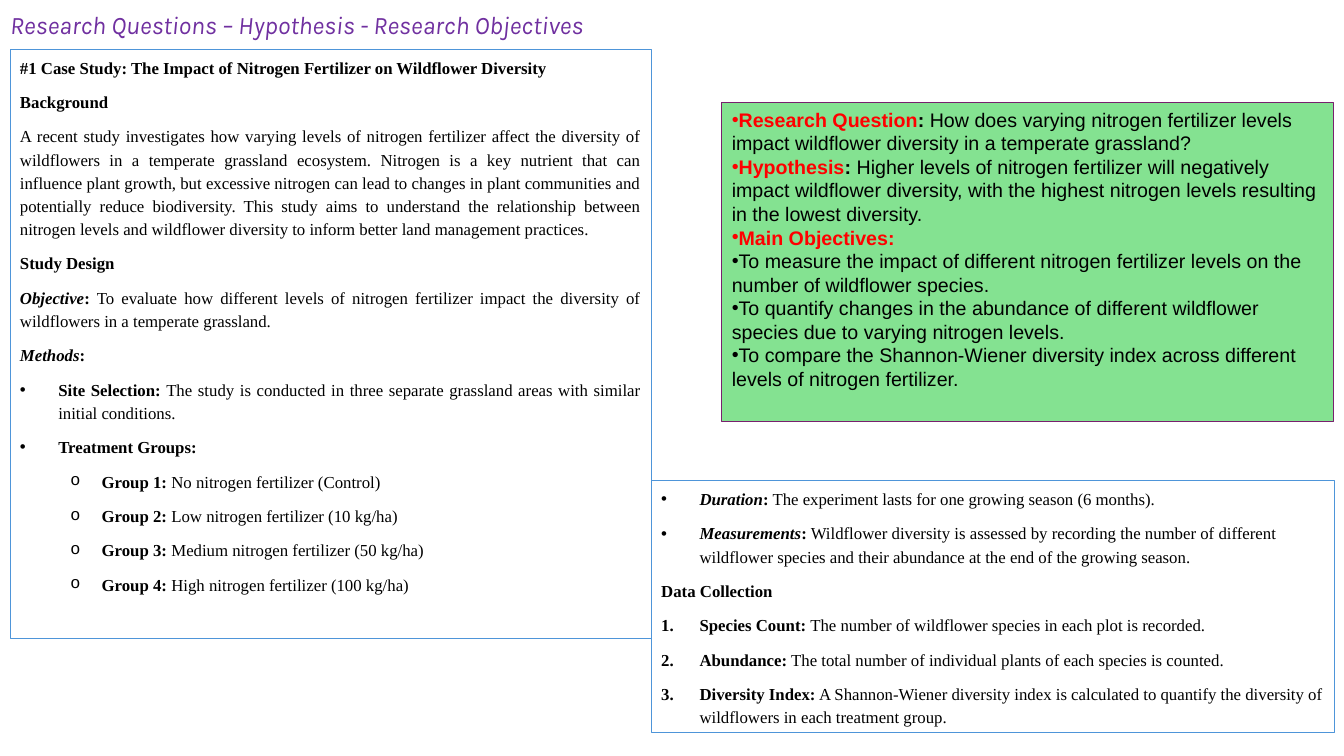
from lxml import etree
from pptx import Presentation
from pptx.dml.color import RGBColor
from pptx.enum.shapes import MSO_SHAPE
from pptx.enum.text import MSO_ANCHOR, MSO_AUTO_SIZE, PP_ALIGN
from pptx.oxml.ns import qn
from pptx.util import Inches, Pt

RECTANGLE = MSO_SHAPE.RECTANGLE
TOP = MSO_ANCHOR.TOP
NO_AUTOFIT = MSO_AUTO_SIZE.NONE
LEFT, JUSTIFY = PP_ALIGN.LEFT, PP_ALIGN.JUSTIFY

COLORS = {"title": "7030A0", "text": "000000", "key": "FF0000",
          "frame": "4E95D9", "answer_fill": "84E291", "answer_line": "78206E"}

# Content: each paragraph is (kind, (style, text), ...); b bold, i italic, k key colour
TITLE = "Research Questions – Hypothesis - Research Objectives"

CASE_STUDY = [
    ("plain", ("b", "#1 Case Study: The Impact of Nitrogen Fertilizer on Wildflower Diversity")),
    ("plain", ("b", "Background")),
    ("plain", ("", "A recent study investigates how varying levels of nitrogen fertilizer affect "
                   "the diversity of wildflowers in a temperate grassland ecosystem. Nitrogen is "
                   "a key nutrient that can influence plant growth, but excessive nitrogen can "
                   "lead to changes in plant communities and potentially reduce biodiversity. "
                   "This study aims to understand the relationship between nitrogen levels and "
                   "wildflower diversity to inform better land management practices.")),
    ("plain", ("b", "Study Design")),
    ("plain", ("bi", "Objective"), ("b", ":"),
     ("", " To evaluate how different levels of nitrogen fertilizer impact the diversity of "
          "wildflowers in a temperate grassland.")),
    ("plain", ("bi", "Methods"), ("b", ":")),
    ("bullet", ("b", "Site Selection:"),
     ("", " The study is conducted in three separate grassland areas with similar initial "
          "conditions.")),
    ("bullet", ("b", "Treatment Groups:")),
    ("group", ("b", "Group 1:"), ("", " No nitrogen fertilizer (Control)")),
    ("group", ("b", "Group 2:"), ("", " Low nitrogen fertilizer (10 kg/ha)")),
    ("group", ("b", "Group 3:"), ("", " Medium nitrogen fertilizer (50 kg/ha)")),
    ("group", ("b", "Group 4:"), ("", " High nitrogen fertilizer (100 kg/ha)")),
]

DATA_COLLECTION = [
    ("bullet", ("bi", "Duration"), ("b", ":"),
     ("", " The experiment lasts for one growing season (6 months).")),
    ("bullet", ("bi", "Measurements"), ("b", ":"),
     ("", " Wildflower diversity is assessed by recording the number of different wildflower "
          "species and their abundance at the end of the growing season.")),
    ("plain", ("b", "Data Collection")),
    ("number", ("b", "Species Count:"),
     ("", " The number of wildflower species in each plot is recorded.")),
    ("number", ("b", "Abundance:"),
     ("", " The total number of individual plants of each species is counted.")),
    ("number", ("b", "Diversity Index:"),
     ("", " A Shannon-Wiener diversity index is calculated to quantify the diversity of "
          "wildflowers in each treatment group.")),
]

ANSWERS = [
    ("tight", ("bk", "Research Question"), ("b", ": "),
     ("", "How does varying nitrogen fertilizer levels impact wildflower diversity in a "
          "temperate grassland?")),
    ("tight", ("bk", "Hypothesis"), ("b", ": "),
     ("", "Higher levels of nitrogen fertilizer will negatively impact wildflower diversity, "
          "with the highest nitrogen levels resulting in the lowest diversity.")),
    ("tight", ("bk", "Main Objectives:")),
    ("tight", ("", "To measure the impact of different nitrogen fertilizer levels on the number "
                   "of wildflower species.")),
    ("tight", ("", "To quantify changes in the abundance of different wildflower species due to "
                   "varying nitrogen levels.")),
    ("tight", ("", "To compare the Shannon-Wiener diversity index across different levels of "
                   "nitrogen fertilizer.")),
]

# Kind: level, left margin, hanging indent, tab stop, bullet font, bullet mark
LISTS = {
    "bullet": (0, 0.38, 0.38, 0.5, "Arial", ("a:buChar", "char", "•")),
    "number": (0, 0.38, 0.38, 0.5, "+mj-lt", ("a:buAutoNum", "type", "arabicPeriod")),
    "group": (1, 0.81, 0.31, 1, "Courier New", ("a:buChar", "char", "o")),
    "tight": (0, 0, 0, None, "Arial", ("a:buChar", "char", "•")),
}

# Panels: left, top, width, height, fill, line, font, size, spacing, space after, alignment
PANELS = [
    (CASE_STUDY, (0.1, 0.49, 6.36, 5.84), None, "frame",
     "Times New Roman", 12, 1.15, 8, JUSTIFY),
    (DATA_COLLECTION, (6.46, 4.77, 6.78, 2.5), None, "frame",
     "Times New Roman", 12, 1.15, 8, LEFT),
    (ANSWERS, (7.16, 1.02, 6.07, 3.16), "answer_fill", "answer_line",
     "Arial", 14, 1.0, 0, LEFT),
]


def color(name):
    return RGBColor.from_string(COLORS[name])


def set_list(paragraph, kind):
    level, margin, hanging, tab, bullet_font, (mark, attribute, value) = LISTS[kind]
    paragraph.level = level
    props = paragraph._p.get_or_add_pPr()
    props.set("marL", str(Inches(margin)))
    props.set("indent", str(-Inches(hanging)))
    etree.SubElement(props, qn("a:buFont")).set("typeface", bullet_font)
    etree.SubElement(props, qn(mark)).set(attribute, value)
    if tab:
        stops = etree.SubElement(props, qn("a:tabLst"))
        etree.SubElement(stops, qn("a:tab"), pos=str(Inches(tab)), algn="l")


def format_paragraph(paragraph, font, size, spacing, after, alignment):
    paragraph.alignment = alignment
    paragraph.line_spacing = spacing
    paragraph.space_after = Pt(after)
    paragraph.font.name = font
    paragraph.font.size = Pt(size)


def format_frame(frame):
    frame.word_wrap = True
    frame.auto_size = NO_AUTOFIT
    frame.vertical_anchor = TOP


def add_panel(slide, content, place, fill, line, *text_format):
    panel = slide.shapes.add_shape(RECTANGLE, *map(Inches, place))
    panel.shadow.inherit = False
    if fill:
        panel.fill.solid()
        panel.fill.fore_color.rgb = color(fill)
    else:
        panel.fill.background()
    panel.line.color.rgb = color(line)
    panel.line.width = Pt(0.75)
    frame = panel.text_frame
    format_frame(frame)
    for index, (kind, *pieces) in enumerate(content):
        paragraph = frame.add_paragraph() if index else frame.paragraphs[0]
        if kind in LISTS:
            set_list(paragraph, kind)
        format_paragraph(paragraph, *text_format)
        for style, text in pieces:
            run = paragraph.add_run()
            run.text = text
            run.font.bold = "b" in style
            run.font.italic = "i" in style
            run.font.color.rgb = color("key" if "k" in style else "text")


def main():
    deck = Presentation()
    deck.slide_width, deck.slide_height = Inches(13.33), Inches(7.5)
    slide = deck.slides.add_slide(deck.slide_layouts[5])

    # Title
    title = slide.shapes.title
    title.left, title.top, title.width, title.height = map(Inches, (0, 0, 6.67, 0.43))
    title.text_frame.text = TITLE
    format_frame(title.text_frame)
    heading = title.text_frame.paragraphs[0]
    format_paragraph(heading, "Karla", 18, 1.15, 8, LEFT)
    heading.font.italic = True
    heading.font.color.rgb = color("title")

    # Text panels
    for panel in PANELS:
        add_panel(slide, *panel)

    deck.save("out.pptx")


if __name__ == "__main__":
    main()
